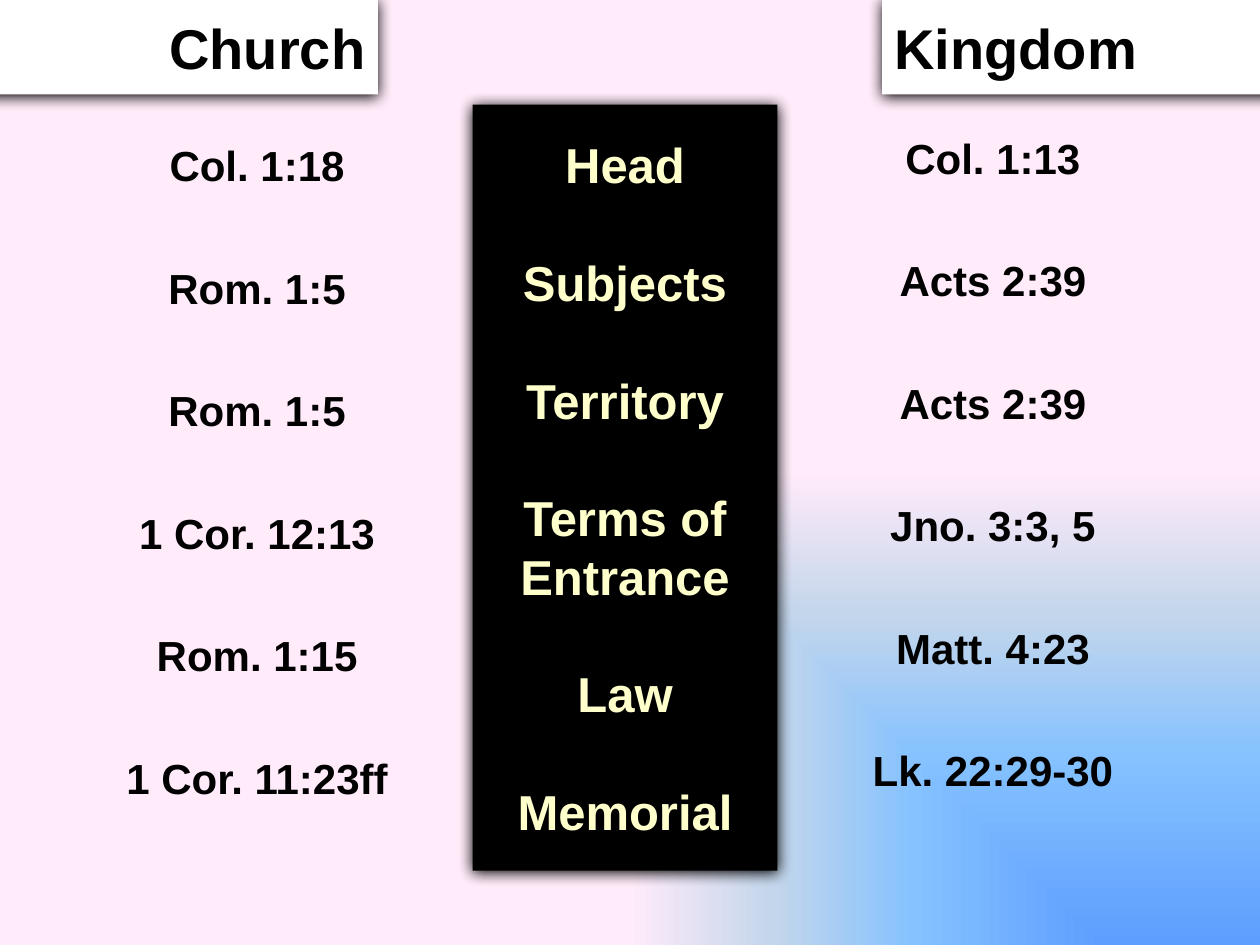
from dataclasses import dataclass

from pptx import Presentation
from pptx.dml.color import RGBColor
from pptx.enum.shapes import MSO_SHAPE
from pptx.enum.text import MSO_ANCHOR, PP_ALIGN
from pptx.oxml import parse_xml
from pptx.oxml.ns import nsdecls, qn
from pptx.util import Inches, Pt

RECT = MSO_SHAPE.RECTANGLE
MIDDLE, TOP = MSO_ANCHOR.MIDDLE, MSO_ANCHOR.TOP
LEFT, CENTER, RIGHT = PP_ALIGN.LEFT, PP_ALIGN.CENTER, PP_ALIGN.RIGHT


@dataclass(frozen=True)
class Theme:
    """Colours and type of the slide."""
    font: str = "Arial"
    black: str = "000000"
    white: str = "FFFFFF"
    cream: str = "FFFFCC"
    heading: int = 32
    topic: int = 28
    verse: int = 24
    backdrop: tuple = ((0, "5E9EFF"), (40, "85C2FF"), (70, "C4D6EB"), (100, "FFEBFA"))


THEME = Theme()
TOPICS = ["Head", "Subjects", "Territory", "Terms of\vEntrance", "Law", "Memorial"]
CHURCH = ["Col. 1:18", "Rom. 1:5", "Rom. 1:5", "1 Cor. 12:13", "Rom. 1:15", "1 Cor. 11:23ff"]
KINGDOM = ["Col. 1:13", "Acts 2:39", "Acts 2:39", "Jno. 3:3, 5", "Matt. 4:23", "Lk. 22:29-30"]


def write(tf, lines, size, color=THEME.black, align=CENTER, anchor=TOP,
          wrap=True, spacing=None, gap=0):
    """Fill a text frame with one bold paragraph per line."""
    tf.word_wrap = wrap
    tf.vertical_anchor = anchor
    for i, line in enumerate(lines):
        p = tf.add_paragraph() if i else tf.paragraphs[0]
        p.text = line
        p.alignment = align
        p.line_spacing = spacing
        p.space_before = Pt(gap if i else 0)
        for r in p.runs:
            r.font.name = THEME.font
            r.font.size = Pt(size)
            r.font.bold = True
            r.font.color.rgb = RGBColor.from_string(color)


def add_backdrop(s):
    """Set a gradient background that spreads from the lower right corner."""
    stops = "".join(f'<a:gs pos="{pos * 1000}"><a:srgbClr val="{color}"/></a:gs>'
                    for pos, color in THEME.backdrop)
    bg = parse_xml(
        f'<p:bg {nsdecls("p", "a")}><p:bgPr><a:gradFill rotWithShape="0">'
        f'<a:gsLst>{stops}</a:gsLst><a:path path="rect">'
        '<a:fillToRect l="100000" t="100000"/></a:path></a:gradFill>'
        '<a:effectLst/></p:bgPr></p:bg>')
    s.element.find(qn("p:cSld")).insert(0, bg)


def add_panel(s, box, fill):
    """Add a borderless rectangle with a soft shadow and return its text frame."""
    sp = s.shapes.add_shape(RECT, *map(Inches, box))
    sp.fill.solid()
    sp.fill.fore_color.rgb = RGBColor.from_string(fill)
    sp.line.fill.background()
    sp.element.spPr.append(parse_xml(
        f'<a:effectLst {nsdecls("a")}><a:outerShdw blurRad="{Pt(8.5)}" dist="{Pt(1)}" '
        f'dir="5400000" rotWithShape="0"><a:srgbClr val="{THEME.black}"/>'
        '</a:outerShdw></a:effectLst>'))
    return sp.text_frame


def add_topics(s, box, topics):
    """Add the central panel of topics."""
    write(add_panel(s, box, THEME.black), topics, THEME.topic, color=THEME.cream,
          anchor=MIDDLE, wrap=False, spacing=Pt(33.6), gap=33.6)


def add_verses(s, box, verses):
    """Add a column of verse references."""
    tf = s.shapes.add_textbox(*map(Inches, box)).text_frame
    write(tf, verses, THEME.verse, spacing=Pt(23), gap=47)


def add_heading(s, box, text, align):
    """Add a column heading that runs off the side of the slide."""
    write(add_panel(s, box, THEME.white), [text], THEME.heading,
          align=align, anchor=MIDDLE, wrap=False)


def main():
    """Build and save the slide."""
    prs = Presentation()
    prs.slide_width, prs.slide_height = Inches(10), Inches(7.5)
    s = prs.slides.add_slide(prs.slide_layouts[6])
    add_backdrop(s)
    add_topics(s, (3.75, 0.83, 2.42, 6.08), TOPICS)
    add_verses(s, (0.83, 1.14, 2.42, 5.61), CHURCH)
    add_verses(s, (6.67, 1.08, 2.42, 5.61), KINGDOM)
    add_heading(s, (-0.42, 0, 3.42, 0.75), "Church", RIGHT)
    add_heading(s, (7, 0, 3.42, 0.75), "Kingdom", LEFT)
    prs.save("out.pptx")


if __name__ == "__main__":
    main()
